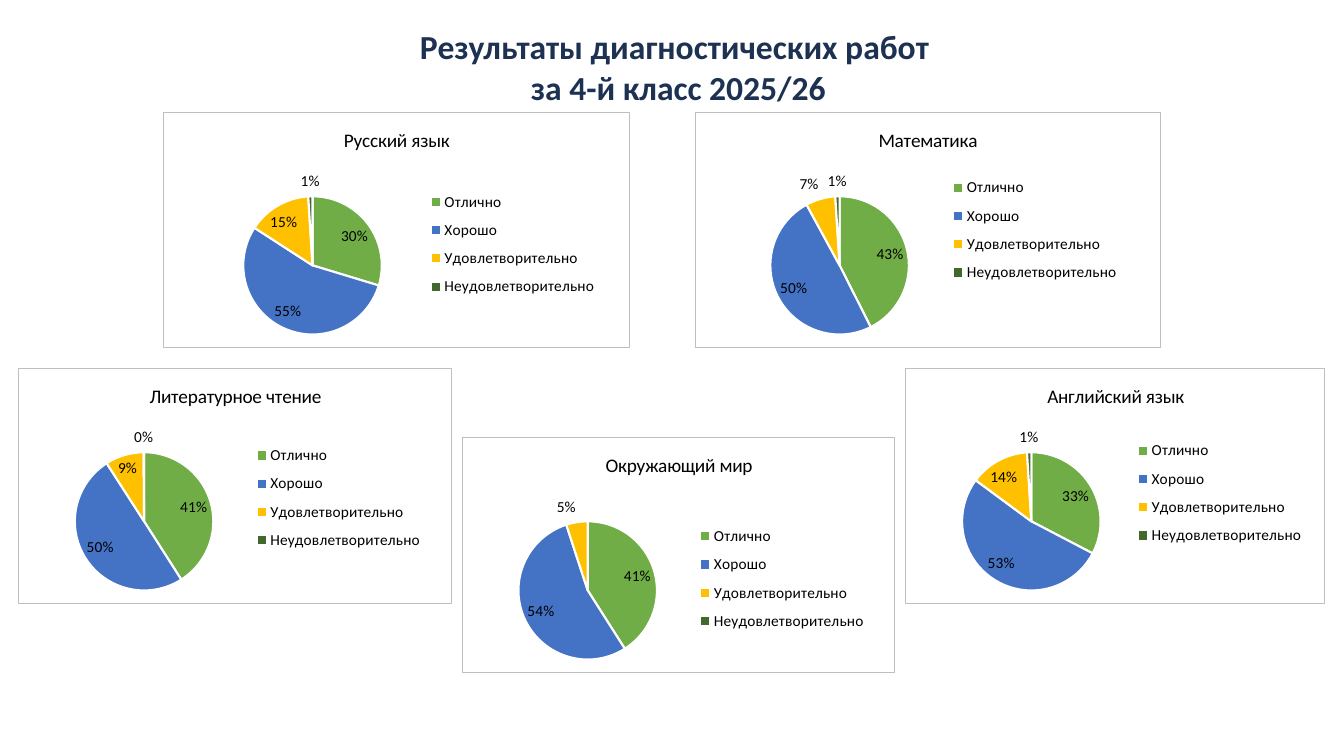
import pptx
import pptx.chart.data
import pptx.dml.color
import pptx.enum.chart
import pptx.enum.text
import pptx.oxml
import pptx.util
from pptx.util import Cm

MARKS = ["Отлично", "Хорошо", "Удовлетворительно", "Неудовлетворительно"]
TINTS = ["70AD47", "4472C4", "FFC000", "43682B"]
FACE = "Calibri"
HIGH = 5.96   # height of every chart, cm
PIE = 3.5     # diameter of every pie, cm
NS = ('xmlns:c="http://schemas.openxmlformats.org/drawingml/2006/chart" '
      'xmlns:a="http://schemas.openxmlformats.org/drawingml/2006/main"')

# subject, its text width, left, top, width (cm), values,
# then as shares of the chart: pie centre x, legend left, legend centre y
TESTS = [
    ("Русский язык", 2.67, 4.11, 2.82, 11.76, [30, 55, 15, 1], 0.32, 0.54, 0.56),
    ("Математика", 2.52, 17.51, 2.82, 11.76, [43, 50, 7, 1], 0.31, 0.52, 0.5),
    # a tiny last value, so that its label still reads 0%
    ("Литературное чтение", 4.33, 0.46, 9.27, 10.92, [41, 50, 9, 0.1], 0.29, 0.53, 0.55),
    ("Окружающий мир", 3.7, 11.64, 11.01, 10.92, [41, 54, 5, 0], 0.29, 0.53, 0.6),
    ("Английский язык", 3.45, 22.81, 9.27, 10.59, [33, 53, 14, 1], 0.3, 0.54, 0.53),
]


def tint(code):
    return pptx.dml.color.RGBColor.from_string(code)


def style(font, size, code="000000", bold=False):
    font.name, font.size, font.bold = FACE, pptx.util.Pt(size), bold
    font.color.rgb = tint(code)


def place(part, slot, inner=False, **box):
    """Give a chart part a fixed layout, as shares of the chart."""
    for old in part.findall("{*}layout"):
        part.remove(old)
    target = '<c:layoutTarget val="inner"/>' if inner else ""
    modes = '<c:xMode val="edge"/><c:yMode val="edge"/>'
    sides = "".join(f'<c:{key} val="{val:.4f}"/>' for key, val in box.items())
    part.insert(slot, pptx.oxml.parse_xml(
        f"<c:layout {NS}><c:manualLayout>{target}{modes}{sides}"
        "</c:manualLayout></c:layout>"))


def frame(space):
    """Draw a thin square-cornered border round the chart."""
    space.find("{*}chart").addprevious(pptx.oxml.parse_xml(
        f'<c:roundedCorners {NS} val="0"/>'))
    space.find("{*}chart").addnext(pptx.oxml.parse_xml(
        f'<c:spPr {NS}><a:solidFill><a:srgbClr val="FFFFFF"/></a:solidFill>'
        '<a:ln w="9525"><a:solidFill><a:srgbClr val="BFBFBF"/></a:solidFill>'
        "</a:ln></c:spPr>"))


def add_pie(slide, name, span, left, top, width, vals, mid, key_left, key_mid):
    data = pptx.chart.data.CategoryChartData()
    data.categories = MARKS
    data.add_series("Series 1", vals)
    chart = slide.shapes.add_chart(
        pptx.enum.chart.XL_CHART_TYPE.PIE,
        Cm(left), Cm(top), Cm(width), Cm(HIGH), data).chart
    style(chart.font, 11)

    chart.has_title = True
    title = chart.chart_title
    title.include_in_layout = False
    title.text_frame.text = name
    style(title.text_frame.paragraphs[0].runs[0].font, 13.8)
    place(title._element, 1, x=0.5 - (span / 2 + 0.08) / width, y=0.05)

    chart.has_legend = True
    key = chart.legend
    key.position = pptx.enum.chart.XL_LEGEND_POSITION.RIGHT
    key.include_in_layout = False
    style(key.font, 11)
    place(key._element, 1, x=key_left, y=key_mid - 0.26, w=0.42, h=0.52)

    plot = chart.plots[0]
    plot.vary_by_categories = True
    for spot, code in enumerate(TINTS):
        slice_ = plot.series[0].points[spot].format
        slice_.fill.solid()
        slice_.fill.fore_color.rgb = tint(code)
        slice_.line.color.rgb = tint("FFFFFF")
        slice_.line.width = pptx.util.Pt(1.5)
    plot.has_data_labels = True
    labels = plot.data_labels
    labels.show_value = True
    labels.show_percentage = False
    labels.number_format = '0"%"'
    labels.number_format_is_linked = False
    labels.position = pptx.enum.chart.XL_LABEL_POSITION.BEST_FIT
    style(labels.font, 11)

    wide, tall = PIE / width, PIE / HIGH
    space = chart._chartSpace
    place(space.find("{*}chart/{*}plotArea"), 0, inner=True,
          x=mid - wide / 2, y=0.65 - tall / 2, w=wide, h=tall)
    frame(space)


def add_head(slide, left, top, width, height):
    head = slide.shapes.title
    head.left, head.top, head.width, head.height = map(Cm, (left, top, width, height))
    text = head.text_frame
    text.text = "Результаты диагностических работ \nза 4-й класс 2025/26"
    text.word_wrap = True
    text.vertical_anchor = pptx.enum.text.MSO_ANCHOR.TOP
    for line in text.paragraphs:
        line.alignment = pptx.enum.text.PP_ALIGN.CENTER
        style(line.runs[0].font, 24, "1D3152", True)


def main():
    deck = pptx.Presentation()
    deck.slide_width, deck.slide_height = Cm(33.87), Cm(19.05)
    slide = deck.slides.add_slide(deck.slide_layouts[5])
    add_head(slide, 7.57, 0.53, 19.05, 2.31)
    for test in TESTS:
        add_pie(slide, *test)
    deck.save("out.pptx")


if __name__ == "__main__":
    main()
